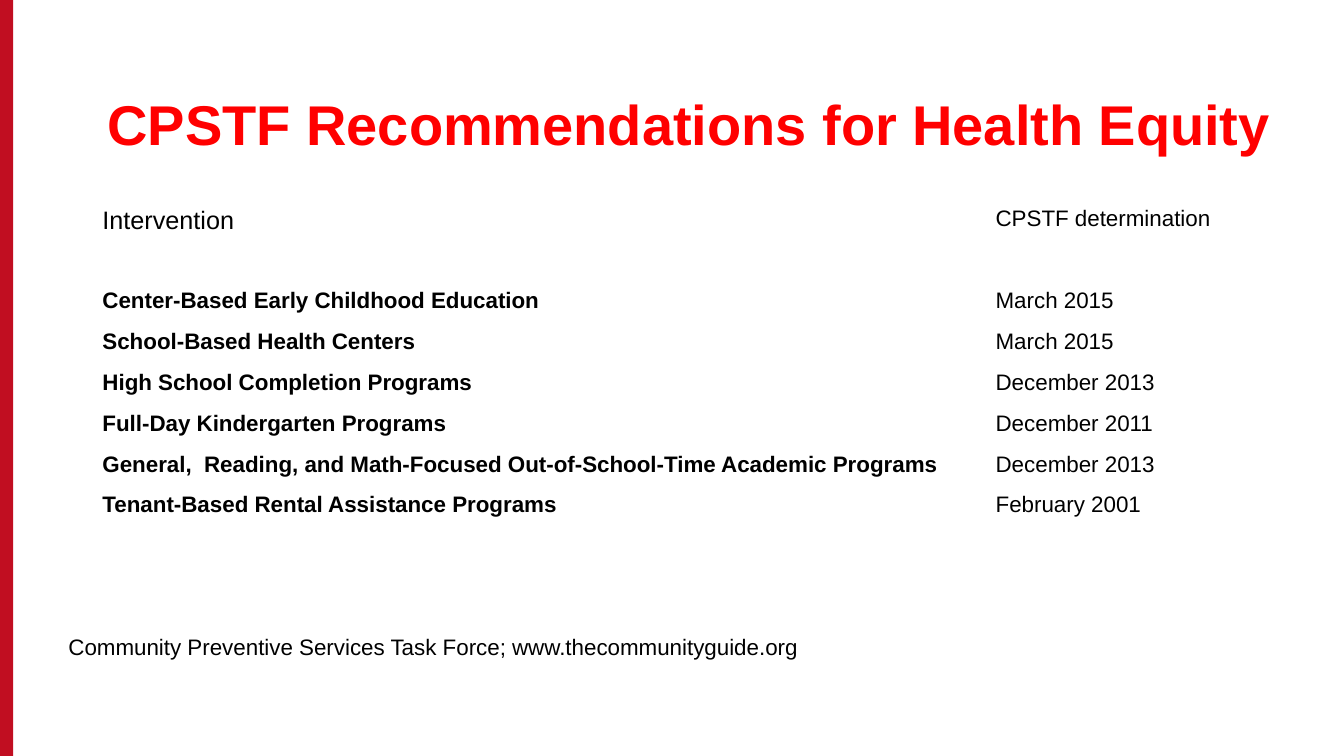
from pptx import Presentation
from pptx.dml.color import RGBColor
from pptx.enum.shapes import MSO_SHAPE
from pptx.util import Pt

RECTANGLE = MSO_SHAPE.RECTANGLE
COLORS = {"bar": "C10E21", "title": "FF0000", "body": "000000"}
FONT = "Arial"
HEADINGS = ("Intervention", "CPSTF determination")
RECOMMENDATIONS = [
    ("Center-Based Early Childhood Education", "March 2015"),
    ("School-Based Health Centers", "March 2015"),
    ("High School Completion Programs", "December 2013"),
    ("Full-Day Kindergarten Programs", "December 2011"),
    ("General,  Reading, and Math-Focused Out-of-School-Time Academic Programs",
     "December 2013"),
    ("Tenant-Based Rental Assistance Programs", "February 2001"),
]
COLUMN_WIDTHS = (638, 190)
ROW_HEIGHT = 29.2


def write(frame, text, size=16, color="body", bold=False, spacing=1.0):
    frame.word_wrap = True
    paragraph = frame.paragraphs[0]
    paragraph.line_spacing = spacing
    run = paragraph.add_run()
    run.text = text
    run.font.name = FONT
    run.font.size = Pt(size)
    run.font.bold = bold
    run.font.color.rgb = RGBColor.from_string(COLORS[color])


def add_text(slide, left, top, width, height, text, **style):
    box = slide.shapes.add_textbox(Pt(left), Pt(top), Pt(width), Pt(height))
    write(box.text_frame, text, **style)


def add_side_bar(slide, width, height):
    bar = slide.shapes.add_shape(RECTANGLE, 0, 0, Pt(width), Pt(height))
    bar.shadow.inherit = False
    bar.fill.solid()
    bar.fill.fore_color.rgb = RGBColor.from_string(COLORS["bar"])
    bar.line.fill.background()


def add_recommendations(slide, left, top):
    rows = [HEADINGS, ("", "")] + RECOMMENDATIONS
    table = slide.shapes.add_table(
        len(rows), len(COLUMN_WIDTHS), Pt(left), Pt(top),
        Pt(sum(COLUMN_WIDTHS)), Pt(ROW_HEIGHT * len(rows))).table
    table.first_row = False
    table.horz_banding = False
    for column, width in zip(table.columns, COLUMN_WIDTHS):
        column.width = Pt(width)
    for row_index, texts in enumerate(rows):
        table.rows[row_index].height = Pt(ROW_HEIGHT)
        for column_index, text in enumerate(texts):
            cell = table.cell(row_index, column_index)
            cell.fill.background()
            if text:
                first_column = column_index == 0
                heading = row_index == 0
                write(cell.text_frame, text,
                      size=18 if heading and first_column else 16,
                      bold=first_column and not heading)


def main():
    presentation = Presentation()
    presentation.slide_width = Pt(960)
    presentation.slide_height = Pt(540)
    slide = presentation.slides.add_slide(presentation.slide_layouts[6])
    add_side_bar(slide, 9.4, 540)
    add_text(slide, 69.8, 65.5, 862.5, 61, "CPSTF Recommendations for Health Equity",
             size=40, color="title", bold=True, spacing=0.9)
    add_recommendations(slide, 66, 144)
    add_text(slide, 41.8, 448.5, 590, 26.6,
             "Community Preventive Services Task Force; www.thecommunityguide.org")
    presentation.save("out.pptx")


if __name__ == "__main__":
    main()
